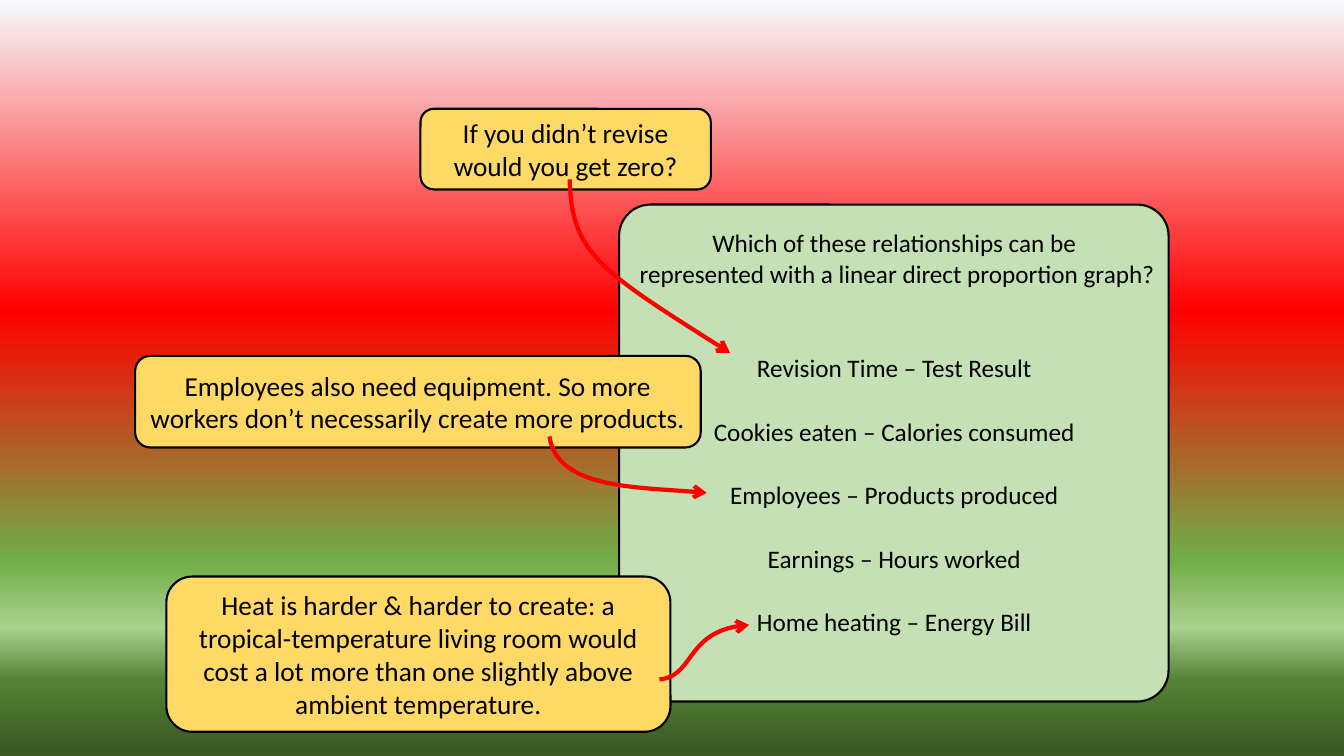
from dataclasses import dataclass

from lxml import etree
from pptx import Presentation
from pptx.dml.color import RGBColor
from pptx.enum.shapes import MSO_SHAPE
from pptx.enum.text import MSO_ANCHOR, MSO_AUTO_SIZE, PP_ALIGN
from pptx.oxml.ns import qn
from pptx.shapes.autoshape import Shape
from pptx.slide import Slide
from pptx.text.text import TextFrame
from pptx.util import Inches, Length, Pt

ROUNDED = MSO_SHAPE.ROUNDED_RECTANGLE
CENTER = PP_ALIGN.CENTER
MIDDLE = MSO_ANCHOR.MIDDLE
GROW = MSO_AUTO_SIZE.SHAPE_TO_FIT_TEXT
BLANK_LAYOUT = 6
CURVE_STEPS = 32


@dataclass(frozen=True)
class Theme:
    font: str = "Calibri"
    text_size: float = 18
    callout_size: float = 19.5
    outline_width: float = 1.5
    arrow_width: float = 3
    ink: str = "000000"
    panel: str = "C5E0B4"
    callout: str = "FFD966"
    arrow: str = "FF0000"
    background: tuple[tuple[int, str], ...] = (
        (0, "F7FAFD"), (41, "FF0000"), (74, "70AD47"),
        (83, "A9D18E"), (90, "548235"), (100, "385723"),
    )


@dataclass(frozen=True)
class Box:
    """A place on the grid, in columns and rows."""
    column: float
    row: float
    columns: float
    rows: float

    def lengths(self) -> tuple[Length, ...]:
        return tuple(map(grid, (self.column, self.row, self.columns, self.rows)))


@dataclass(frozen=True)
class Callout:
    box: Box
    text: str


@dataclass(frozen=True)
class CurvedArrow:
    """A cubic curve: start, two control points and the arrow tip."""
    points: tuple[tuple[float, float], ...]


THEME = Theme()
PANEL = Box(61.4, 20.3, 54.5, 49.3)
PANEL_ROUNDING = 0.063
CALLOUT_SIDE_MARGIN = 0.8
CALLOUT_END_MARGIN = 0.5
QUESTION_BOX = Box(58.4, 22.1, 60.6, 7.1)
QUESTION = ("Which of these relationships can be",
            " represented with a linear direct proportion graph?")
FIRST_RELATIONSHIP = Box(66.2, 34.5, 45, 4)
RELATIONSHIP_PITCH = 6.3
RELATIONSHIPS = (
    "Revision Time – Test Result",
    "Cookies eaten – Calories consumed",
    "Employees – Products produced",
    "Earnings – Hours worked",
    "Home heating – Energy Bill",
)
CALLOUTS = (
    Callout(Box(41.7, 10.8, 28.8, 8), "If you didn’t revise would you get zero?"),
    Callout(Box(13.4, 35.3, 56.1, 9.1),
            "Employees also need equipment. So more workers don’t "
            "necessarily create more products."),
    Callout(Box(16.5, 57.2, 50, 15.4),
            "Heat is harder & harder to create: a tropical-temperature living room "
            "would cost a lot more than one slightly above ambient temperature."),
)
ARROWS = (
    CurvedArrow(((65.4, 67.4), (69, 67.1), (67.9, 62.4), (74.3, 62))),
    CurvedArrow(((56.5, 17.8), (56.7, 25.2), (59.4, 26.8), (72.4, 35))),
    CurvedArrow(((54.5, 43.3), (55.3, 48.7), (63.7, 48.3), (70.1, 48.9))),
)


def grid(units: float) -> Length:
    """Columns and rows are a tenth of an inch each."""
    return Inches(units / 10)


def color(value: str) -> RGBColor:
    return RGBColor.from_string(value)


def paint_background(slide: Slide) -> None:
    fill = slide.background.fill
    fill.gradient()
    fill.gradient_angle = 270
    stops = next(slide.element.iter(qn("a:gsLst")))
    for stop in list(stops):
        stops.remove(stop)
    for percent, value in THEME.background:
        stop = etree.SubElement(stops, qn("a:gs"), pos=str(percent * 1000))
        etree.SubElement(stop, qn("a:srgbClr"), val=value)


def write_lines(frame: TextFrame, lines: tuple[str, ...], size: float) -> None:
    frame.word_wrap = True
    for index, line in enumerate(lines):
        paragraph = frame.add_paragraph() if index else frame.paragraphs[0]
        paragraph.alignment = CENTER
        run = paragraph.add_run()
        run.text = line
        run.font.name = THEME.font
        run.font.size = Pt(size)
        run.font.color.rgb = color(THEME.ink)


def add_text(slide: Slide, box: Box, lines: tuple[str, ...]) -> None:
    frame = slide.shapes.add_textbox(*box.lengths()).text_frame
    write_lines(frame, lines, THEME.text_size)
    frame.auto_size = GROW


def add_rounded_box(slide: Slide, box: Box, fill: str) -> Shape:
    shape = slide.shapes.add_shape(ROUNDED, *box.lengths())
    shape.shadow.inherit = False
    shape.fill.solid()
    shape.fill.fore_color.rgb = color(fill)
    shape.line.color.rgb = color(THEME.ink)
    shape.line.width = Pt(THEME.outline_width)
    return shape


def add_callout(slide: Slide, callout: Callout) -> None:
    frame = add_rounded_box(slide, callout.box, THEME.callout).text_frame
    frame.margin_left = frame.margin_right = grid(CALLOUT_SIDE_MARGIN)
    frame.margin_top = frame.margin_bottom = grid(CALLOUT_END_MARGIN)
    frame.vertical_anchor = MIDDLE
    write_lines(frame, (callout.text,), THEME.callout_size)


def curve_point(arrow: CurvedArrow, share: float) -> tuple[Length, Length]:
    rest = 1 - share
    weights = (rest**3, 3 * rest**2 * share, 3 * rest * share**2, share**3)
    column, row = (sum(weight * value for weight, value in zip(weights, values))
                   for values in zip(*arrow.points))
    return grid(column), grid(row)


def add_curved_arrow(slide: Slide, arrow: CurvedArrow) -> None:
    start, *others = [curve_point(arrow, step / CURVE_STEPS)
                      for step in range(CURVE_STEPS + 1)]
    builder = slide.shapes.build_freeform(*start)
    builder.add_line_segments(others, close=False)
    shape = builder.convert_to_shape()
    shape.shadow.inherit = False
    shape.fill.background()
    shape.line.color.rgb = color(THEME.arrow)
    shape.line.width = Pt(THEME.arrow_width)
    outline = shape.element.spPr.find(qn("a:ln"))
    etree.SubElement(outline, qn("a:round"))
    etree.SubElement(outline, qn("a:tailEnd"), type="arrow")


def main() -> None:
    presentation = Presentation()
    presentation.slide_width = Inches(13.33)
    presentation.slide_height = Inches(7.5)
    slide = presentation.slides.add_slide(presentation.slide_layouts[BLANK_LAYOUT])
    paint_background(slide)
    add_rounded_box(slide, PANEL, THEME.panel).adjustments[0] = PANEL_ROUNDING
    add_text(slide, QUESTION_BOX, QUESTION)
    first = FIRST_RELATIONSHIP
    for index, relationship in enumerate(RELATIONSHIPS):
        row = first.row + index * RELATIONSHIP_PITCH
        add_text(slide, Box(first.column, row, first.columns, first.rows), (relationship,))
    for callout in CALLOUTS:
        add_callout(slide, callout)
    for arrow in ARROWS:
        add_curved_arrow(slide, arrow)
    presentation.save("out.pptx")


if __name__ == "__main__":
    main()
